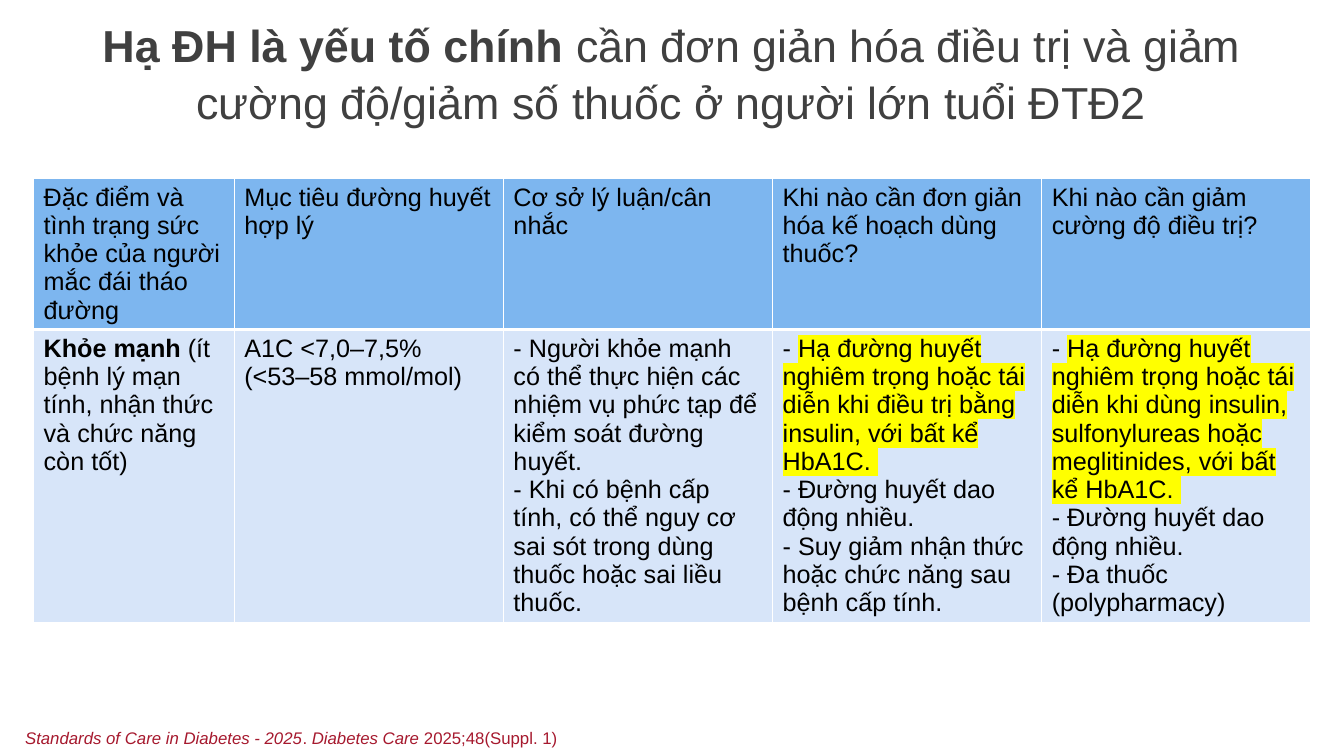
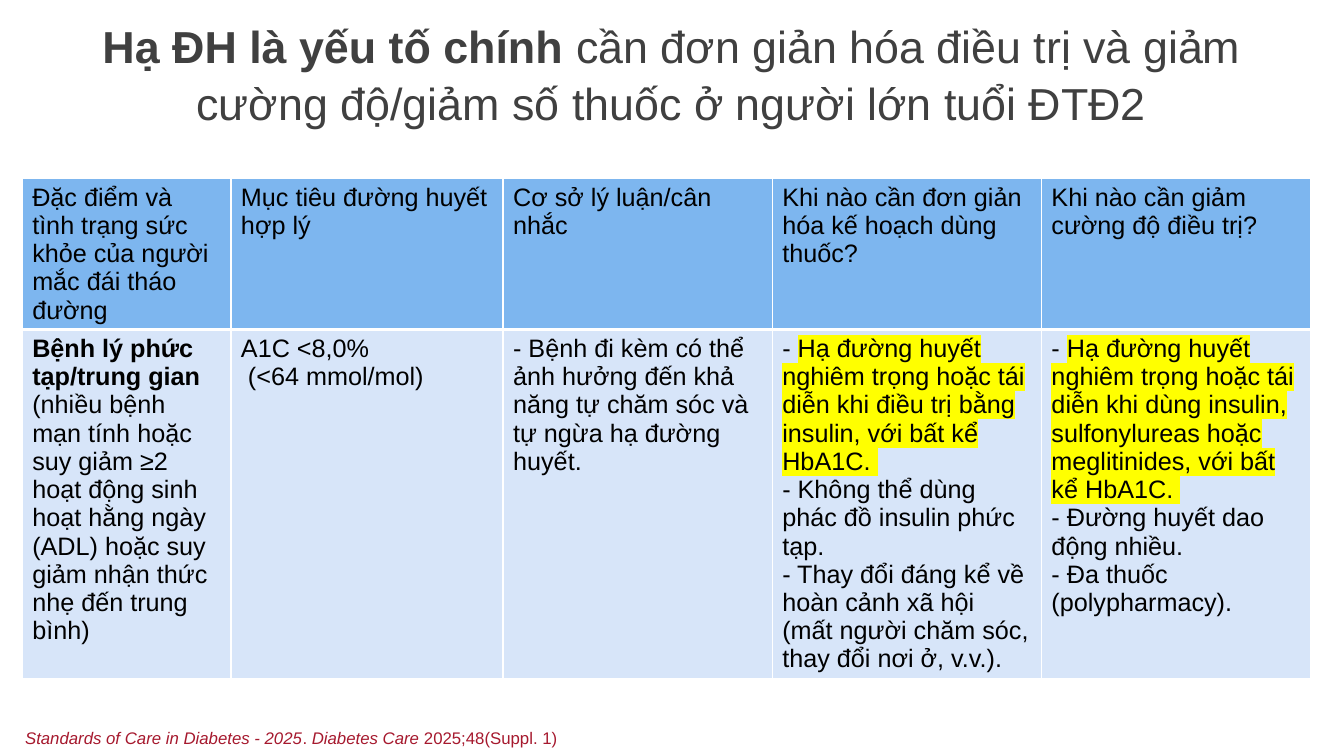
from lxml import etree
from pptx import Presentation
from pptx import util as u
from pptx.dml import color
from pptx.enum import text
from pptx.oxml import ns

COLORS = {
    "title": "404040",
    "text": "000000",
    "source": "A6192E",
    "header": "7DB6EF",
    "body": "D7E5F9",
    "border": "FFFFFF",
    "mark": "FFFF00",
}
FONT = "Arial"
STYLES = {
    "plain": {"bold": False, "italic": False},
    "bold": {"bold": True, "italic": False},
    "italic": {"bold": False, "italic": True},
    "mark": {"bold": False, "italic": False},
}
TITLE_ONLY = 5


def add_solid(parent, tag, name):
    """Append an element that holds one colour."""
    item = etree.SubElement(parent, ns.qn(tag))
    etree.SubElement(item, ns.qn("a:srgbClr"), val=COLORS[name])
    return item


class Slides:
    """Holds the style and the current page; lengths are percent of the slide."""

    def __init__(self):
        self.deck = Presentation()
        self.deck.slide_width = u.Inches(13.33)
        self.deck.slide_height = u.Inches(7.5)
        self.page = None

    def x(self, share):
        return round(self.deck.slide_width * share / 100)

    def y(self, share):
        return round(self.deck.slide_height * share / 100)

    def area(self, left, top, width, height):
        return self.x(left), self.y(top), self.x(width), self.y(height)

    def new_page(self):
        layout = self.deck.slide_layouts[TITLE_ONLY]
        self.page = self.deck.slides.add_slide(layout)

    def add_spans(self, para, spans, size, name):
        """Fill a paragraph with (text, style) spans; newlines become breaks."""
        for words, style in spans:
            for number, line in enumerate(words.split("\n")):
                if number:
                    para.add_line_break()
                if not line:
                    continue
                span = para.add_run()
                span.text = line
                formats = {"size": u.Pt(size), "name": FONT, **STYLES[style]}
                for key, value in formats.items():
                    setattr(span.font, key, value)
                span.font.color.rgb = color.RGBColor.from_string(COLORS[name])
                if style == "mark":
                    props = span._r.get_or_add_rPr()
                    mark = add_solid(props, "a:highlight", "mark")
                    props.find(ns.qn("a:solidFill")).addnext(mark)

    def title(self, spans, top, height):
        box = self.page.shapes.title
        box.left, box.top, box.width, box.height = self.area(5, top, 90, height)
        frame = box.text_frame
        formats = {
            "word_wrap": True,
            "auto_size": text.MSO_AUTO_SIZE.NONE,
            "vertical_anchor": text.MSO_ANCHOR.MIDDLE,
        }
        for key, value in formats.items():
            setattr(frame, key, value)
        para = frame.paragraphs[0]
        para.alignment = text.PP_ALIGN.CENTER
        para.line_spacing = 1.06
        self.add_spans(para, spans, 32, "title")

    def source(self, spans):
        box = self.page.shapes.add_textbox(*self.area(1.13, 95.6, 59.4, 4))
        box.text_frame.word_wrap = True
        self.add_spans(box.text_frame.paragraphs[0], spans, 12, "source")

    def borders(self, cell, top, bottom):
        """Draw the four cell sides, widths in points."""
        props = cell._tc.get_or_add_tcPr()
        sides = {"a:lnL": 1, "a:lnR": 1, "a:lnT": top, "a:lnB": bottom}
        for place, (tag, width) in enumerate(sides.items()):
            line = etree.Element(ns.qn(tag), w=str(u.Pt(width)))
            add_solid(line, "a:solidFill", "border")
            props.insert(place, line)

    def table(self, left, widths, heights, rows):
        """Each cell is a list of paragraphs, each a list of spans."""
        area = self.area(left, 23.6, sum(widths), sum(heights))
        grid = self.page.shapes.add_table(len(rows), len(widths), *area).table
        grid.horz_banding = False
        for column, width in zip(grid.columns, widths):
            column.width = self.x(width)
        for row, height in zip(grid.rows, heights):
            row.height = self.y(height)
        for r, row in enumerate(rows):
            fill, edges = ("body", (3, 1)) if r else ("header", (1, 3))
            for c, paras in enumerate(row):
                cell = grid.cell(r, c)
                cell.fill.solid()
                cell.fill.fore_color.rgb = color.RGBColor.from_string(COLORS[fill])
                self.borders(cell, *edges)
                frame = cell.text_frame
                for number, spans in enumerate(paras):
                    para = frame.add_paragraph() if number else frame.paragraphs[0]
                    self.add_spans(para, spans, 18, "text")


def plain(*paras):
    return [[(words, "plain")] for words in paras]


def marked(warning, rest):
    return [[("- ", "plain"), (warning, "mark"), (rest, "plain")]]


# Text shared by both slides
TITLE = [
    ("Hạ ĐH là yếu tố chính ", "bold"),
    ("cần đơn giản hóa điều trị và giảm cường độ/giảm số thuốc "
     "ở người lớn tuổi ĐTĐ2", "plain"),
]
SOURCE = [
    ("Standards of Care in Diabetes - 2025", "italic"),
    (". ", "plain"),
    ("Diabetes Care ", "italic"),
    ("2025;48(Suppl. 1)", "plain"),
]
HEADER = [plain(words) for words in (
    "Đặc điểm và tình trạng sức khỏe của người mắc đái tháo đường",
    "Mục tiêu đường huyết hợp lý",
    "Cơ sở lý luận/cân nhắc",
    "Khi nào cần đơn giản hóa kế hoạch dùng thuốc?",
    "Khi nào cần giảm cường độ điều trị?",
)]
SIMPLIFY = ("Hạ đường huyết nghiêm trọng hoặc tái diễn khi điều trị bằng insulin, "
            "với bất kể HbA1C. \n")
REDUCE = ("Hạ đường huyết nghiêm trọng hoặc tái diễn khi dùng insulin, "
          "sulfonylureas hoặc meglitinides, với bất kể HbA1C. \n")

# What differs from slide to slide
HEALTHY = {
    "title": (4, 10.8),
    "left": 2.5,
    "widths": [14.93] + [20.03] * 4,
    "height": 38.8,
    "cells": [
        [[("Khỏe mạnh", "bold"),
          (" (ít bệnh lý mạn tính, nhận thức và chức năng còn tốt)", "plain")]],
        plain("A1C <7,0–7,5% (<53–58 mmol/mol)"),
        plain("- Người khỏe mạnh có thể thực hiện các nhiệm vụ phức tạp để "
              "kiểm soát đường huyết. \n- Khi có bệnh cấp tính, có thể nguy cơ "
              "sai sót trong dùng thuốc hoặc sai liều thuốc."),
        marked(SIMPLIFY, "- Đường huyết dao động nhiều. \n- Suy giảm nhận thức "
                         "hoặc chức năng sau bệnh cấp tính."),
        marked(REDUCE, "- Đường huyết dao động nhiều. \n"
                       "- Đa thuốc (polypharmacy)"),
    ],
}
COMPLEX = {
    "title": (0.4, 18.27),
    "left": 1.65,
    "widths": [15.53, 20.25] + [20.03] * 3,
    "height": 46.2,
    "cells": [
        [[("Bệnh lý phức tạp/trung gian", "bold"),
          (" (nhiều bệnh mạn tính hoặc suy giảm ≥2 hoạt động sinh hoạt hằng "
           "ngày (ADL) hoặc suy giảm nhận thức nhẹ đến trung bình)", "plain")]],
        plain("A1C <8,0%", " (<64 mmol/mol)"),
        plain("- Bệnh đi kèm có thể ảnh hưởng đến khả năng tự chăm sóc và "
              "tự ngừa hạ đường huyết."),
        marked(SIMPLIFY, "- Không thể dùng phác đồ insulin phức tạp. \n"
                         "- Thay đổi đáng kể về hoàn cảnh xã hội (mất người "
                         "chăm sóc, thay đổi nơi ở, v.v.)."),
        marked(REDUCE, "- Đường huyết dao động nhiều.\n"
                       "- Đa thuốc (polypharmacy)."),
    ],
}


def main():
    slides = Slides()
    for group in (HEALTHY, COMPLEX):
        slides.new_page()
        slides.title(TITLE, *group["title"])
        slides.table(group["left"], group["widths"], [19.8, group["height"]],
                     [HEADER, group["cells"]])
        slides.source(SOURCE)
    slides.deck.save("out.pptx")


if __name__ == "__main__":
    main()
